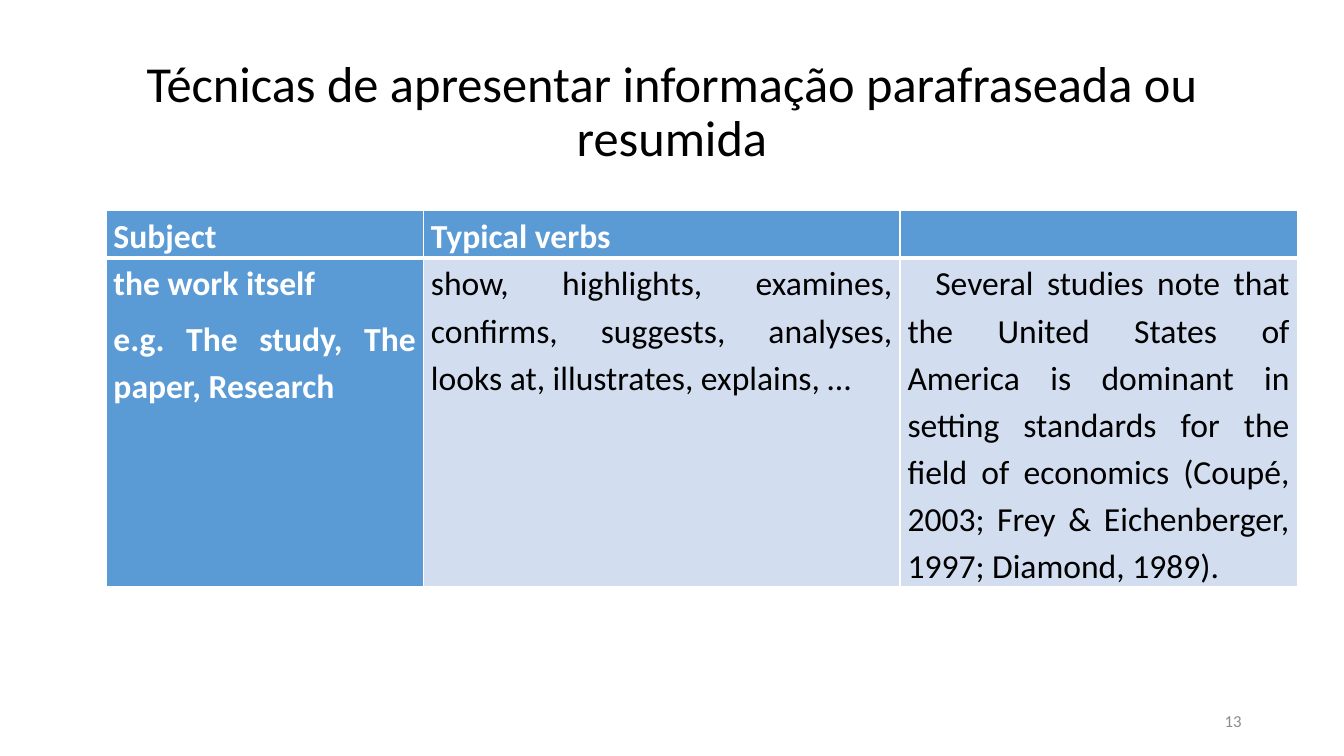
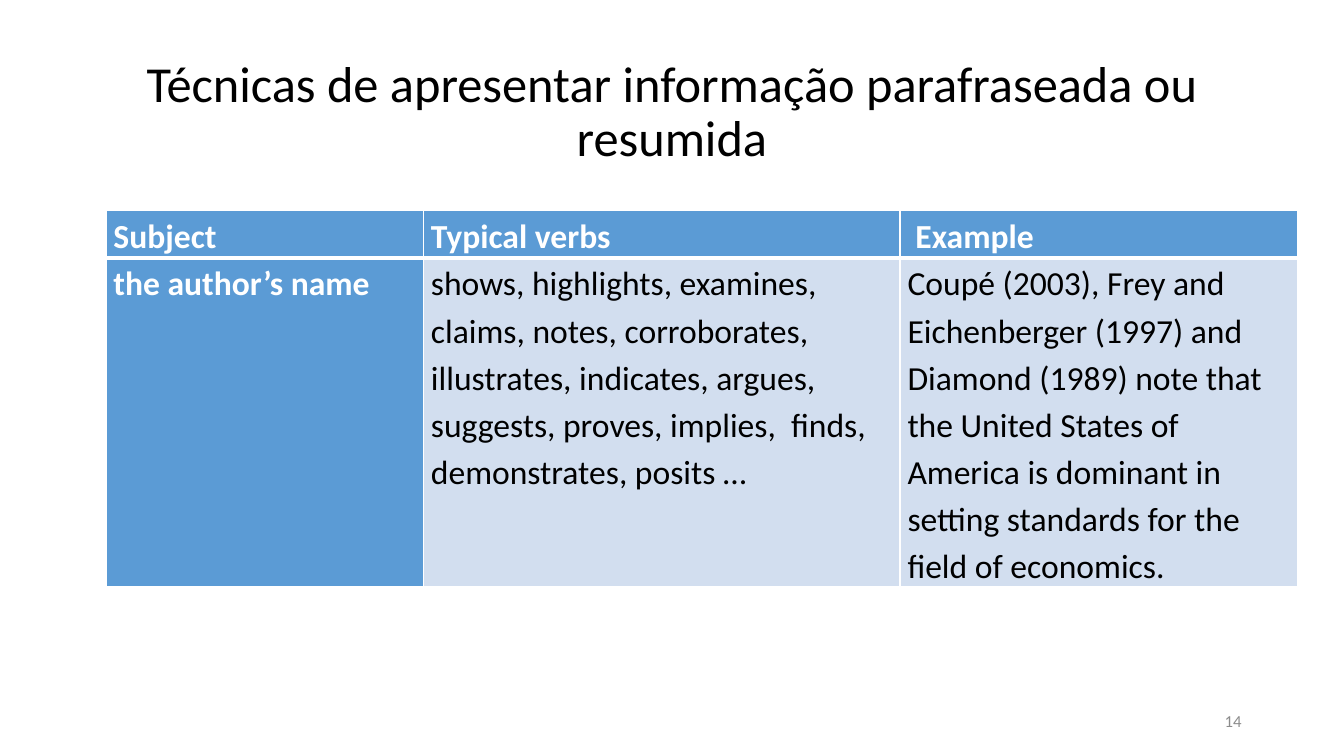
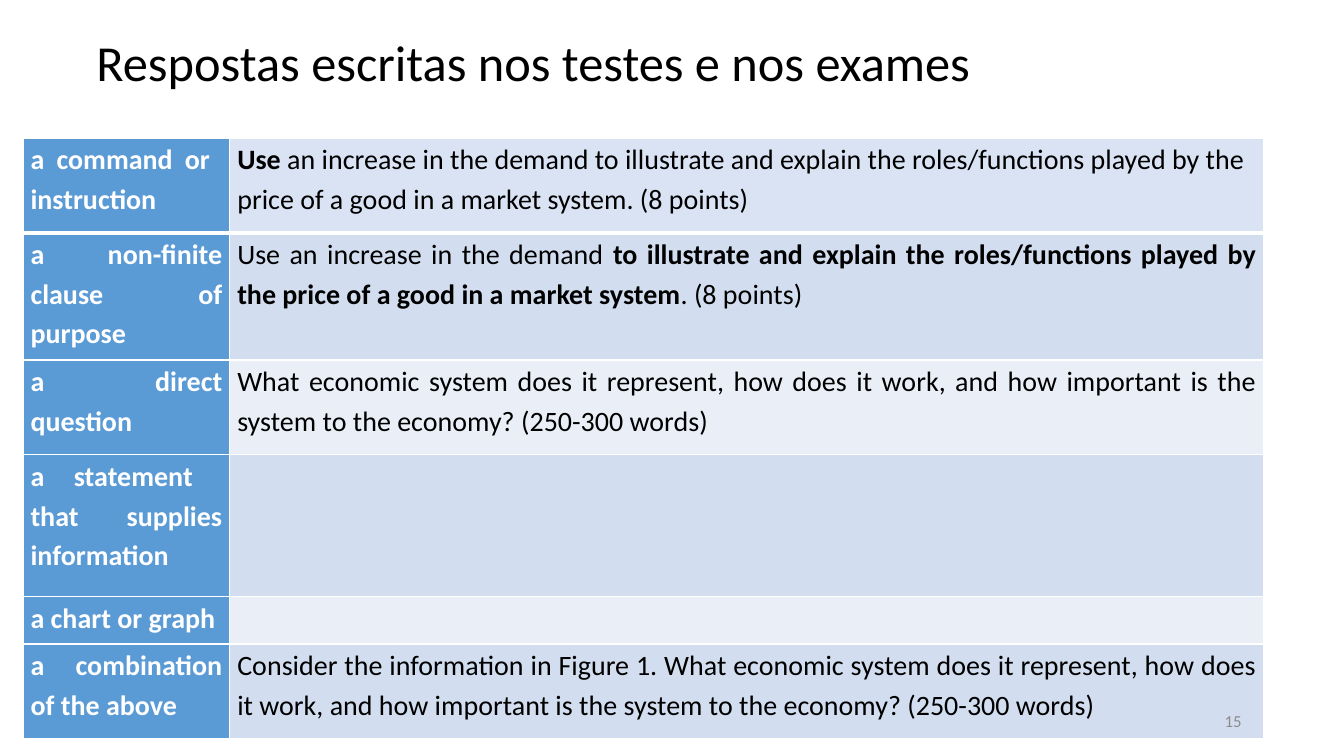
"""Build three slides on paraphrasing verbs and written exam answers."""
from dataclasses import dataclass
from functools import partial

from lxml.etree import SubElement
from pptx import Presentation
from pptx.dml.color import RGBColor
from pptx.enum.text import MSO_ANCHOR as Anchor, PP_ALIGN as Align
from pptx.oxml.ns import qn
from pptx.util import Cm, Pt

FONT = "Calibri"
BLACK, WHITE, GREY = "000000", "FFFFFF", "8C8C8C"
BLUE, LIGHT, PALE, LAVENDER = "5B9BD5", "D2DEEF", "EAEFF7", "DAE3F3"
FIRST_NUMBER = 13
THIN, THICK = 1, 3
TECHNIQUES = "Técnicas de apresentar informação parafraseada ou resumida"


@dataclass(frozen=True)
class Entry:
    text: str = ""
    fill: str = LIGHT
    color: str = BLACK
    bold: bool = False
    align: Align = Align.JUSTIFY
    indent: float = 0
    after: float = 6


@dataclass(frozen=True)
class Grid:
    left: float
    top: float
    columns: tuple[float, ...]
    heights: tuple[float, ...]
    size: float
    rows: tuple[tuple[Entry, ...], ...]


@dataclass(frozen=True)
class Page:
    title: str
    grid: Grid
    title_left: float = 2.33
    title_top: float = 1.02
    title_align: Align = Align.CENTER


Label = partial(Entry, fill=BLUE, color=WHITE, bold=True)
LeftEntry = partial(Entry, align=Align.LEFT)
VerbGrid = partial(Grid, 2.67, 5.31, (8, 12.01, 10.01), (1.19, 8.28), 24)

PAGES = (
    Page(TECHNIQUES, VerbGrid((
        (Label("Subject"), Label("Typical verbs"), Label()),
        (
            Label("the work itself\ne.g. The study, The paper, Research"),
            Entry("show, highlights, examines, confirms, suggests, analyses, "
                  "looks at, illustrates, explains, …"),
            Entry("Several studies note that the United States of America is dominant "
                  "in setting standards for the field of economics (Coupé, 2003; "
                  "Frey & Eichenberger, 1997; Diamond, 1989).", indent=0.7),
        ),
    ))),
    Page(TECHNIQUES, VerbGrid((
        (Label("Subject"), Label("Typical verbs"), Label("Example", indent=0.2)),
        (
            Label("the author’s name"),
            LeftEntry("shows, highlights, examines, claims, notes, corroborates, "
                      "illustrates, indicates, argues,  suggests, proves, implies,  "
                      "finds, demonstrates, posits …"),
            LeftEntry("Coupé (2003), Frey and Eichenberger (1997) and Diamond (1989) "
                      "note that the United States of America is dominant in setting "
                      "standards for the field of economics."),
        ),
    ))),
    Page("Respostas escritas nos testes e nos exames", Grid(
        0.58, 3.48, (5.21, 26.06), (2.39, 3.2, 2.39, 3.58, 1.19, 2.39), 20, (
            (Label("a command or  instruction"),
             LeftEntry("**Use** an increase in the demand to illustrate and explain the "
                       "roles/functions played by the price of a good in a market "
                       "system. (8 points)", fill=LAVENDER, after=10)),
            (Label("a non-finite clause of purpose"),
             Entry("Use an increase in the demand **to illustrate and explain the "
                   "roles/functions played by the price of a good in a market "
                   "system**. (8 points)")),
            (Label("a direct question"),
             Entry("What economic system does it represent, how does it work, and how "
                   "important is the system to the economy? (250-300 words)", fill=PALE)),
            (Label("a statement  that supplies information"), Entry()),
            (Label("a chart or graph"), Entry(fill=PALE)),
            (Label("a combination of the above"),
             Entry("Consider the information in Figure 1. What economic system does it "
                   "represent, how does it work, and how important is the system to the "
                   "economy? (250-300 words)")),
        )), title_left=2.18, title_top=-0.2, title_align=Align.LEFT),
)


def rgb(color: str) -> RGBColor:
    return RGBColor.from_string(color)


def write(frame, text: str, *, size: float, color: str = BLACK, bold: bool = False,
          align: Align = Align.LEFT, spacing: float = 1, after: float = 0,
          indent: float = 0) -> None:
    frame.word_wrap = True
    for index, line in enumerate(text.split("\n")):
        paragraph = frame.paragraphs[0] if index == 0 else frame.add_paragraph()
        paragraph.alignment = align
        paragraph.line_spacing = spacing
        paragraph.space_after = Pt(after)
        if indent:
            paragraph._p.get_or_add_pPr().set("indent", str(Cm(indent)))
        for part, words in enumerate(line.split("**")):
            if words:
                run = paragraph.add_run()
                run.text = words
                run.font.name = FONT
                run.font.size = Pt(size)
                run.font.bold = bold or part % 2 == 1
                run.font.color.rgb = rgb(color)


def add_label(slide, left: float, top: float, width: float, height: float,
              text: str, **text_format) -> None:
    frame = slide.shapes.add_textbox(Cm(left), Cm(top), Cm(width), Cm(height)).text_frame
    frame.vertical_anchor = Anchor.MIDDLE
    write(frame, text, **text_format)


def draw_borders(cell, row: int) -> None:
    widths = {
        "a:lnL": THIN,
        "a:lnR": THIN,
        "a:lnT": THICK if row == 1 else THIN,
        "a:lnB": THICK if row == 0 else THIN,
    }
    properties = cell._tc.get_or_add_tcPr()
    for side, width in widths.items():
        border = SubElement(properties, qn(side), w=str(Pt(width)))
        SubElement(SubElement(border, qn("a:solidFill")), qn("a:srgbClr"), val=WHITE)


def draw_grid(slide, grid: Grid) -> None:
    table = slide.shapes.add_table(
        len(grid.heights), len(grid.columns), Cm(grid.left), Cm(grid.top),
        Cm(sum(grid.columns)), Cm(sum(grid.heights))).table
    table.first_row = table.horz_banding = False
    for column, width in zip(table.columns, grid.columns):
        column.width = Cm(width)
    for row, height in zip(table.rows, grid.heights):
        row.height = Cm(height)
    for row_index, entries in enumerate(grid.rows):
        for column_index, entry in enumerate(entries):
            cell = table.cell(row_index, column_index)
            cell.margin_left = cell.margin_right = Cm(0.19)
            cell.margin_top = cell.margin_bottom = 0
            draw_borders(cell, row_index)
            cell.fill.solid()
            cell.fill.fore_color.rgb = rgb(entry.fill)
            write(cell.text_frame, entry.text, size=grid.size, color=entry.color,
                  bold=entry.bold, align=entry.align, spacing=1.15,
                  after=entry.after, indent=entry.indent)


def main() -> None:
    deck = Presentation()
    deck.slide_width, deck.slide_height = Cm(33.87), Cm(19.05)
    for number, page in enumerate(PAGES, FIRST_NUMBER):
        slide = deck.slides.add_slide(deck.slide_layouts[6])
        add_label(slide, page.title_left, page.title_top, 29.21, 3.68, page.title,
                  size=36, align=page.title_align, spacing=0.9)
        draw_grid(slide, page.grid)
        add_label(slide, 23.92, 17.66, 7.62, 1.01, str(number),
                  size=12, color=GREY, align=Align.RIGHT)
    deck.save("out.pptx")


if __name__ == "__main__":
    main()
